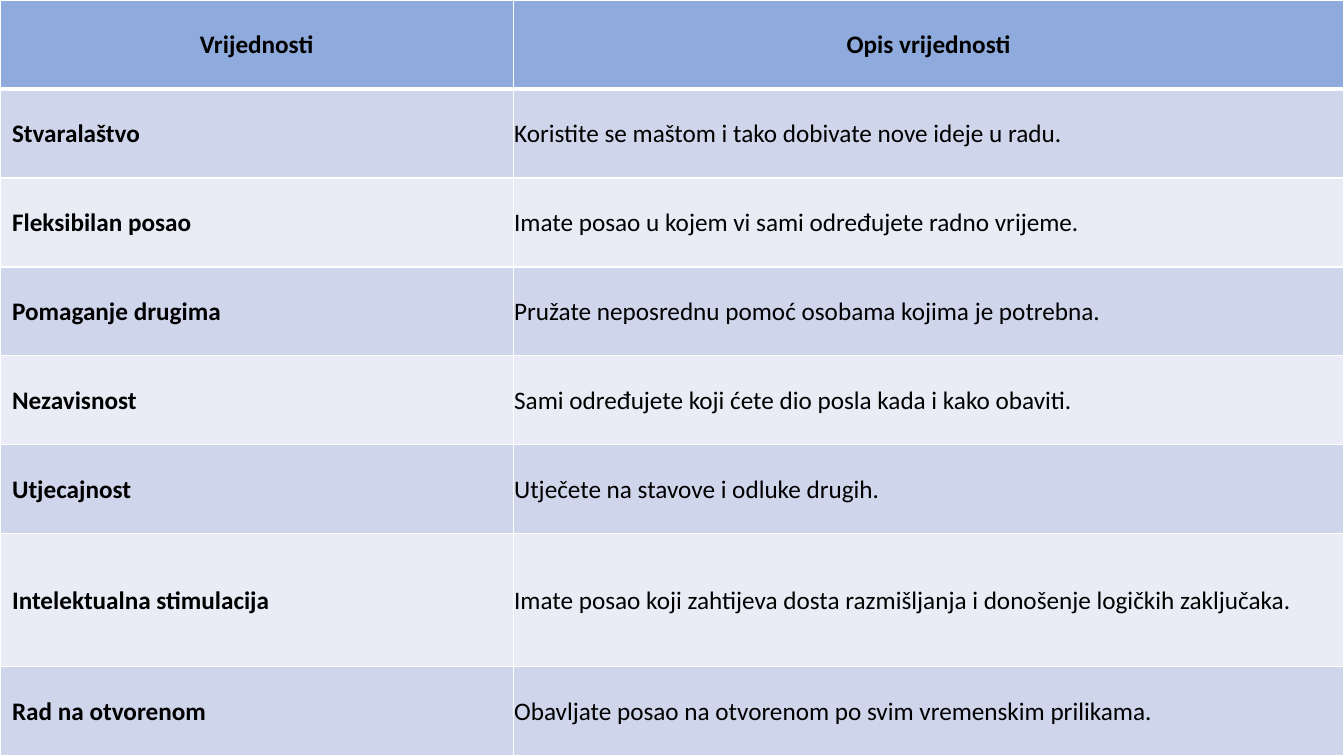
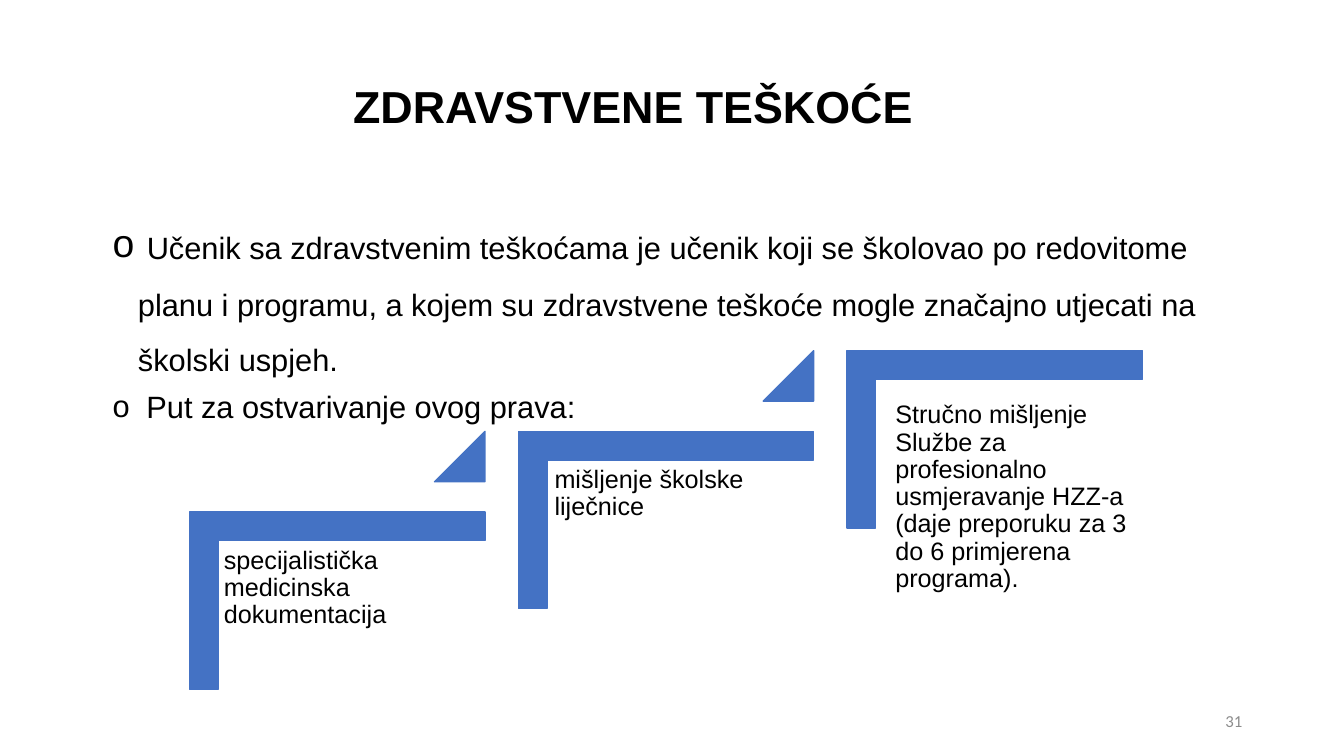
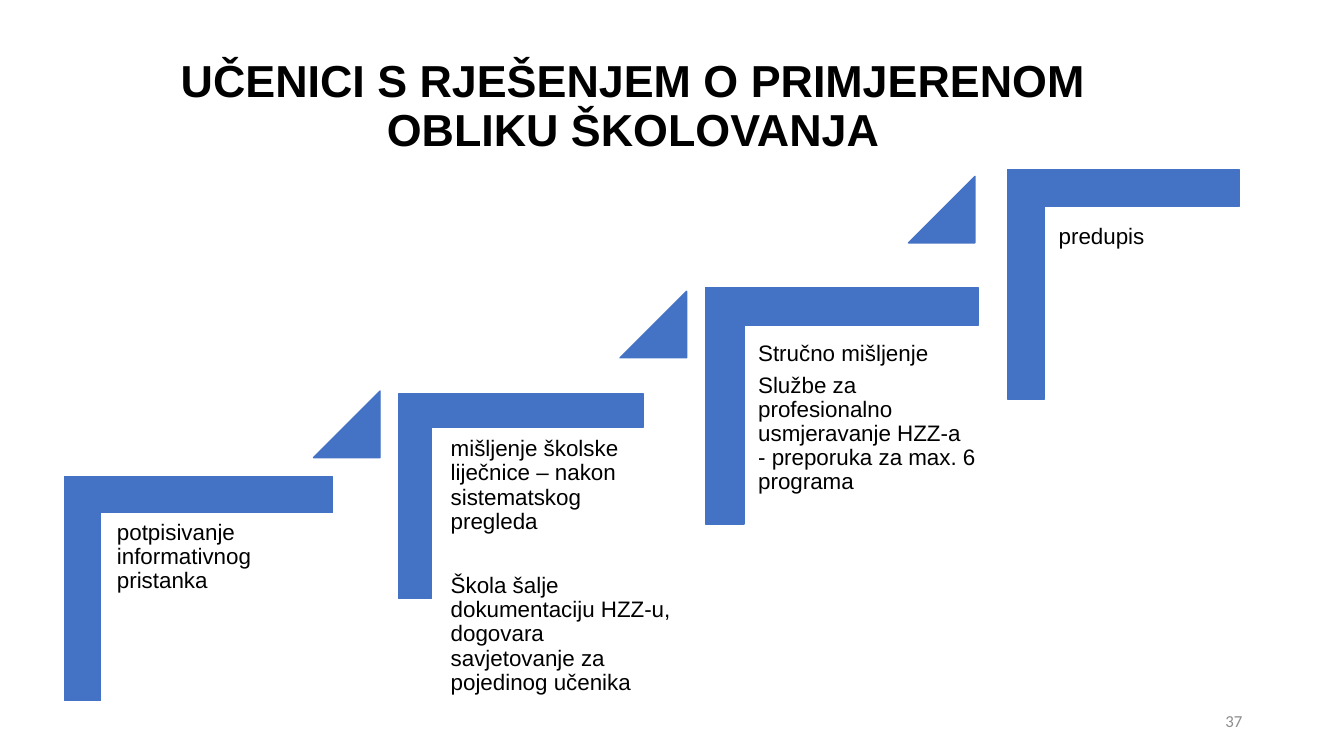
from lxml.etree import SubElement
from pptx import Presentation
from pptx.dml.color import RGBColor
from pptx.enum.shapes import MSO_SHAPE as Shape
from pptx.enum.text import MSO_ANCHOR as Anchor, PP_ALIGN as Align
from pptx.oxml.ns import qn
from pptx.util import Inches, Pt

COLORS = {
    "text": "000000", "number": "8C8C8C", "step": "4472C4", "border": "FFFFFF",
    "header": "8FAADC", "odd": "CFD5EA", "even": "E9EBF5",
}
SLIDE_W, SLIDE_H = 13.33, 7.5

# Content
VALUES = [
    ("Vrijednosti", "Opis vrijednosti"),
    ("Stvaralaštvo", "Koristite se maštom i tako dobivate nove ideje u radu."),
    ("Fleksibilan posao", "Imate posao u kojem vi sami određujete radno vrijeme."),
    ("Pomaganje drugima", "Pružate neposrednu pomoć osobama kojima je potrebna."),
    ("Nezavisnost", "Sami određujete koji ćete dio posla kada i kako obaviti."),
    ("Utjecajnost", "Utječete na stavove i odluke drugih."),
    ("Intelektualna stimulacija",
     "Imate posao koji zahtijeva dosta razmišljanja i donošenje logičkih zaključaka."),
    ("Rad na otvorenom", "Obavljate posao na otvorenom po svim vremenskim prilikama."),
]
NAME_W = 5.09
TALL_ROW, TALL_H = 6, 1.32

HEALTH_TITLE = "ZDRAVSTVENE TEŠKOĆE"
# Each bullet: line spacing, then runs of (text, font, size)
HEALTH_BULLETS = [
    (1.5, [(" ", "Calibri", 28),
           ("Učenik sa zdravstvenim teškoćama je učenik koji se školovao po redovitome "
            "planu i programu, a kojem su zdravstvene teškoće mogle značajno utjecati na "
            "školski uspjeh.", "Arial", 22)]),
    (0.9, [(" Put za ostvarivanje ovog prava:", "Arial", 22)]),
]
# Each step: text box (left, top, width, height), paragraphs
HEALTH_STEPS = [
    ((2.15, 5.36, 2.69, 2.32), ["specijalistička medicinska dokumentacija"]),
    ((5.43, 4.56, 2.65, 2.32), ["mišljenje školske liječnice"]),
    ((8.81, 3.92, 2.62, 2.32),
     ["Stručno mišljenje Službe za profesionalno usmjeravanje HZZ-a "
      "(daje preporuku za 3 do 6 primjerena programa)."]),
]

DECISION_TITLE = "UČENICI S RJEŠENJEM O PRIMJERENOM OBLIKU ŠKOLOVANJA"
# Each step: bracket box, text box, triangle corner, paragraphs
DECISION_STEPS = [
    ((0.64, 4.73, 2.66, 2.22), (1.09, 5.1, 2.16, 1.85), (3.11, 3.88),
     ["potpisivanje informativnog pristanka"]),
    ((3.95, 3.91, 2.43, 2.03), (4.4, 4.27, 2.35, 2.39), (6.15, 2.89),
     ["mišljenje školske liječnice – nakon sistematskog pregleda",
      "Škola šalje dokumentaciju HZZ-u, dogovara savjetovanje za pojedinog učenika"]),
    ((7, 2.85, 2.7, 2.35), (7.45, 3.32, 2.33, 3.09), (9.01, 1.75),
     ["Stručno mišljenje",
      "Službe za profesionalno usmjeravanje HZZ-a\v- preporuka za max. 6 programa"]),
    ((9.99, 1.68, 2.3, 2.28), (10.43, 2.16, 2.35, 2.39), None, ["predupis"]),
]
SCHOOL_STEP, SCHOOL_GAP = 1, 23


# Shared helpers
def color(key):
    return RGBColor.from_string(COLORS[key])


def style(font, name, size, bold=False, key="text"):
    font.name, font.size, font.bold = name, Pt(size), bold
    font.color.rgb = color(key)


def add_text(slide, box, anchor=Anchor.TOP, inset=None):
    frame = slide.shapes.add_textbox(*map(Inches, box)).text_frame
    frame.word_wrap = True
    frame.vertical_anchor = anchor
    if inset is not None:
        frame.margin_left = frame.margin_right = Inches(inset)
        frame.margin_top = frame.margin_bottom = Inches(inset)
    return frame


def add_paragraph(frame, index):
    return frame.add_paragraph() if index else frame.paragraphs[0]


def add_title(slide, text, top):
    title = add_text(slide, (0.78, top, 11, 1.59), Anchor.MIDDLE).paragraphs[0]
    title.text, title.alignment, title.line_spacing = text, Align.CENTER, 0.9
    style(title.font, "Arial", 32, bold=True)


def add_number(slide, number):
    page = add_text(slide, (9.42, 6.95, 3, 0.4), Anchor.MIDDLE).paragraphs[0]
    page.text, page.alignment = str(number), Align.RIGHT
    style(page.font, "Calibri", 12, key="number")


def add_step_shape(slide, preset, box, adjustments):
    shape = slide.shapes.add_shape(preset, *map(Inches, box))
    for i, value in enumerate(adjustments):
        shape.adjustments[i] = value
    shape.shadow.inherit = False
    shape.fill.solid()
    shape.fill.fore_color.rgb = color("step")
    shape.line.color.rgb = color("step")
    shape.line.width = Pt(1)
    return shape


def add_bracket(slide, left, top, width, height):
    # The corner is turned a quarter, so its own sides are swapped
    shift = (width - height) / 2
    box = (left + shift, top - shift, height, width)
    add_step_shape(slide, Shape.CORNER, box, (0.161, 0.161)).rotation = 90


def add_triangle(slide, left, top, side):
    add_step_shape(slide, Shape.ISOSCELES_TRIANGLE, (left, top, side, side), (1,))


def add_step_text(slide, box, lines, size, gap=0):
    frame = add_text(slide, box, inset=0.07)
    for i, line in enumerate(lines):
        step = add_paragraph(frame, i)
        step.text, step.line_spacing = line, 0.9
        step.space_after = Pt(size * 0.35)
        if i and gap:
            step.space_before = Pt(gap)
        style(step.font, "Arial", size)


def add_bullet(paragraph):
    props = paragraph._p.get_or_add_pPr()
    props.set("marL", str(Inches(0.25)))
    props.set("indent", str(-Inches(0.25)))
    SubElement(props, qn("a:buFont")).set("typeface", "Arial")
    SubElement(props, qn("a:buChar")).set("char", "o")


def add_borders(cell, bottom):
    props = cell._tc.get_or_add_tcPr()
    for side, width in (("L", 1), ("R", 1), ("T", 1), ("B", bottom)):
        line = SubElement(props, qn(f"a:ln{side}"), w=str(Pt(width)))
        fill = SubElement(line, qn("a:solidFill"))
        SubElement(fill, qn("a:srgbClr"), val=COLORS["border"])


# Slides
def build_values(slide):
    table = slide.shapes.add_table(
        len(VALUES), 2, 0, 0, Inches(SLIDE_W), Inches(SLIDE_H)).table
    table.columns[0].width = Inches(NAME_W)
    table.columns[1].width = Inches(SLIDE_W - NAME_W)
    row_h = (SLIDE_H - TALL_H) / (len(VALUES) - 1)
    for r, row in enumerate(VALUES):
        table.rows[r].height = Inches(TALL_H if r == TALL_ROW else row_h)
        header = r == 0
        for c, text in enumerate(row):
            cell = table.cell(r, c)
            add_borders(cell, 3 if header else 1)
            cell.fill.solid()
            cell.fill.fore_color.rgb = color(
                "header" if header else "odd" if r % 2 else "even")
            cell.vertical_anchor = Anchor.MIDDLE
            cell.margin_left = Inches(0.01 if header or c else 0.12)
            cell.margin_right = cell.margin_top = Inches(0.01)
            cell.margin_bottom = 0
            value = cell.text_frame.paragraphs[0]
            value.text = text
            value.alignment = Align.CENTER if header else Align.LEFT
            style(value.font, "Calibri", 18, bold=header or c == 0)


def build_health(slide):
    add_title(slide, HEALTH_TITLE, 0.29)
    body = add_text(slide, (1.02, 1.9, 11.24, 4.52))
    for i, (spacing, runs) in enumerate(HEALTH_BULLETS):
        bullet = add_paragraph(body, i)
        bullet.line_spacing, bullet.space_before = spacing, Pt(10)
        add_bullet(bullet)
        for text, font, size in runs:
            run = bullet.add_run()
            run.text = text
            style(run.font, font, size)
    add_number(slide, 31)

    width, height, side, rise = 2.93, 1.76, 0.5, 0.8
    for i, (text_box, lines) in enumerate(HEALTH_STEPS):
        left, top = 1.88 + 3.26 * i, 5.08 - rise * i
        add_bracket(slide, left, top, width, height)
        add_step_text(slide, text_box, lines, 18)
        if i < len(HEALTH_STEPS) - 1:
            add_triangle(slide, left + width - side, top - rise, side)


def build_decision(slide):
    add_title(slide, DECISION_TITLE, 0.27)
    add_number(slide, 37)
    for i, (bracket, text_box, triangle, lines) in enumerate(DECISION_STEPS):
        add_bracket(slide, *bracket)
        add_step_text(slide, text_box, lines, 16, SCHOOL_GAP if i == SCHOOL_STEP else 0)
        if triangle:
            add_triangle(slide, *triangle, 0.66)


def main():
    deck = Presentation()
    deck.slide_width, deck.slide_height = Inches(SLIDE_W), Inches(SLIDE_H)
    for build in (build_values, build_health, build_decision):
        build(deck.slides.add_slide(deck.slide_layouts[6]))
    deck.save("out.pptx")


if __name__ == "__main__":
    main()
